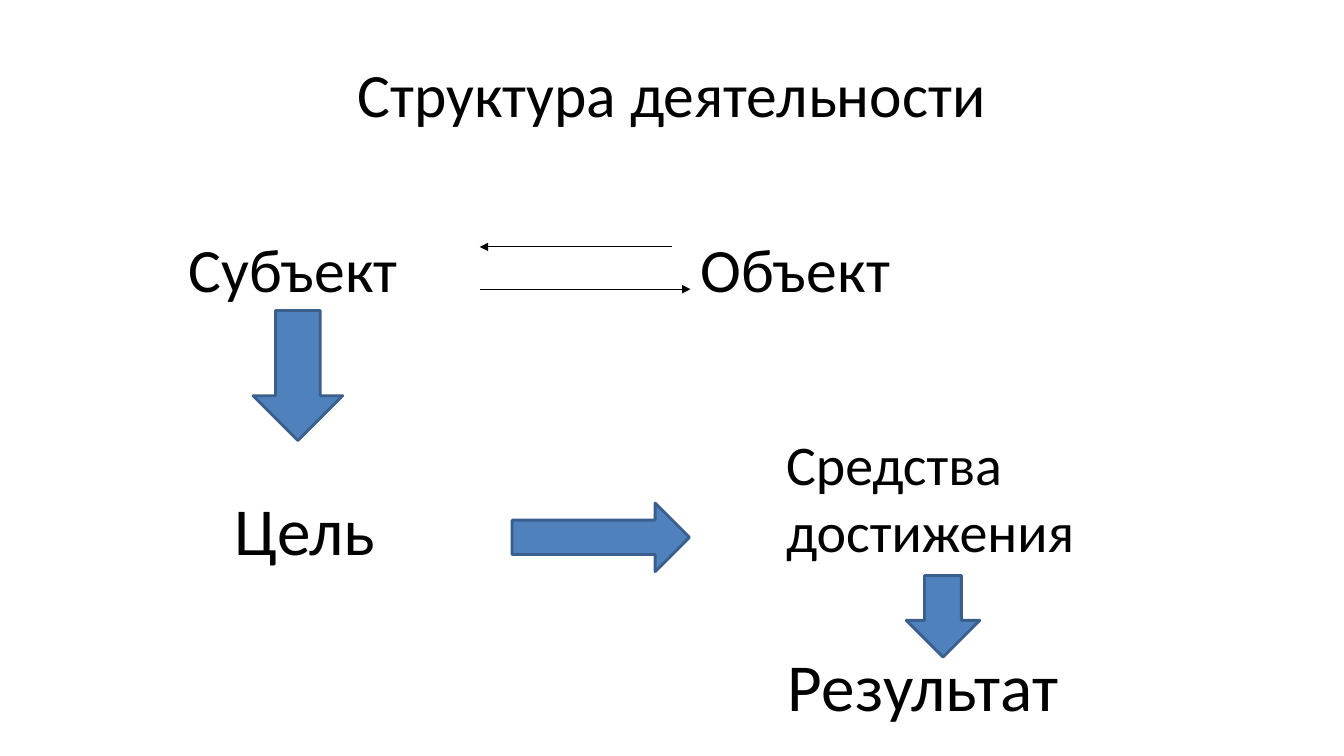
from lxml.etree import SubElement
from pptx import Presentation
from pptx.dml.color import RGBColor
from pptx.enum.shapes import MSO_CONNECTOR as Connector, MSO_SHAPE as Shape
from pptx.enum.text import MSO_ANCHOR as Anchor, PP_ALIGN as Align
from pptx.oxml.ns import qn
from pptx.util import Pt

BLACK = RGBColor(0x00, 0x00, 0x00)
BLUE = RGBColor(0x4F, 0x81, 0xBD)
DARK_BLUE = RGBColor(0x3A, 0x5F, 0x8C)
FONT = "Calibri"


def add_label(slide, text, left, top, width, height, size,
              align=Align.LEFT, anchor=Anchor.TOP):
    box = slide.shapes.add_textbox(Pt(left), Pt(top), Pt(width), Pt(height))
    frame = box.text_frame
    frame.text = text
    frame.word_wrap = True
    frame.vertical_anchor = anchor
    paragraph = frame.paragraphs[0]
    paragraph.alignment = align
    font = paragraph.runs[0].font
    font.name = FONT
    font.size = Pt(size)
    font.color.rgb = BLACK


def add_block_arrow(slide, kind, left, top, width, height):
    shape = slide.shapes.add_shape(kind, Pt(left), Pt(top), Pt(width), Pt(height))
    shape.shadow.inherit = False
    shape.fill.solid()
    shape.fill.fore_color.rgb = BLUE
    shape.line.color.rgb = DARK_BLUE
    shape.line.width = Pt(2)


def add_thin_arrow(slide, start, end, y):
    arrow = slide.shapes.add_connector(
        Connector.STRAIGHT, Pt(start), Pt(y), Pt(end), Pt(y))
    arrow.line.color.rgb = BLACK
    arrow.line.width = Pt(0.75)
    # Arrowhead at the end, no shadow
    SubElement(arrow.line._get_or_add_ln(), qn("a:tailEnd"), type="triangle")
    SubElement(arrow._element.spPr, qn("a:effectLst"))


def main():
    presentation = Presentation()
    presentation.slide_width = Pt(960)
    presentation.slide_height = Pt(540)
    slide = presentation.slides.add_slide(presentation.slide_layouts[6])

    # Title
    add_label(slide, "Структура деятельности", 48, 21.6, 864, 90, 44,
              Align.CENTER, Anchor.MIDDLE)

    # Subject and object act on each other
    add_label(slide, "Субъект", 127.5, 161.3, 216, 60.5, 44)
    add_label(slide, "Объект", 493.2, 161.3, 216, 60.5, 44)
    add_thin_arrow(slide, 480.2, 342.7, 176.4)
    add_thin_arrow(slide, 342.7, 493.2, 206.6)

    # Goal, means and result
    add_block_arrow(slide, Shape.DOWN_ARROW, 180.7, 221.8, 64.1, 92.9)
    add_label(slide, "Цель", 160.6, 345.6, 182.2, 65.5, 48)
    add_block_arrow(slide, Shape.RIGHT_ARROW, 365.8, 359.3, 126.7, 49)
    add_label(slide, "Средства достижения", 554.4, 303.1, 334.8, 104.4, 40)
    add_block_arrow(slide, Shape.DOWN_ARROW, 647.3, 411.1, 52.6, 58.3)
    add_label(slide, "Результат", 555.8, 456.5, 277.9, 65.5, 48)

    presentation.save("out.pptx")


if __name__ == "__main__":
    main()
